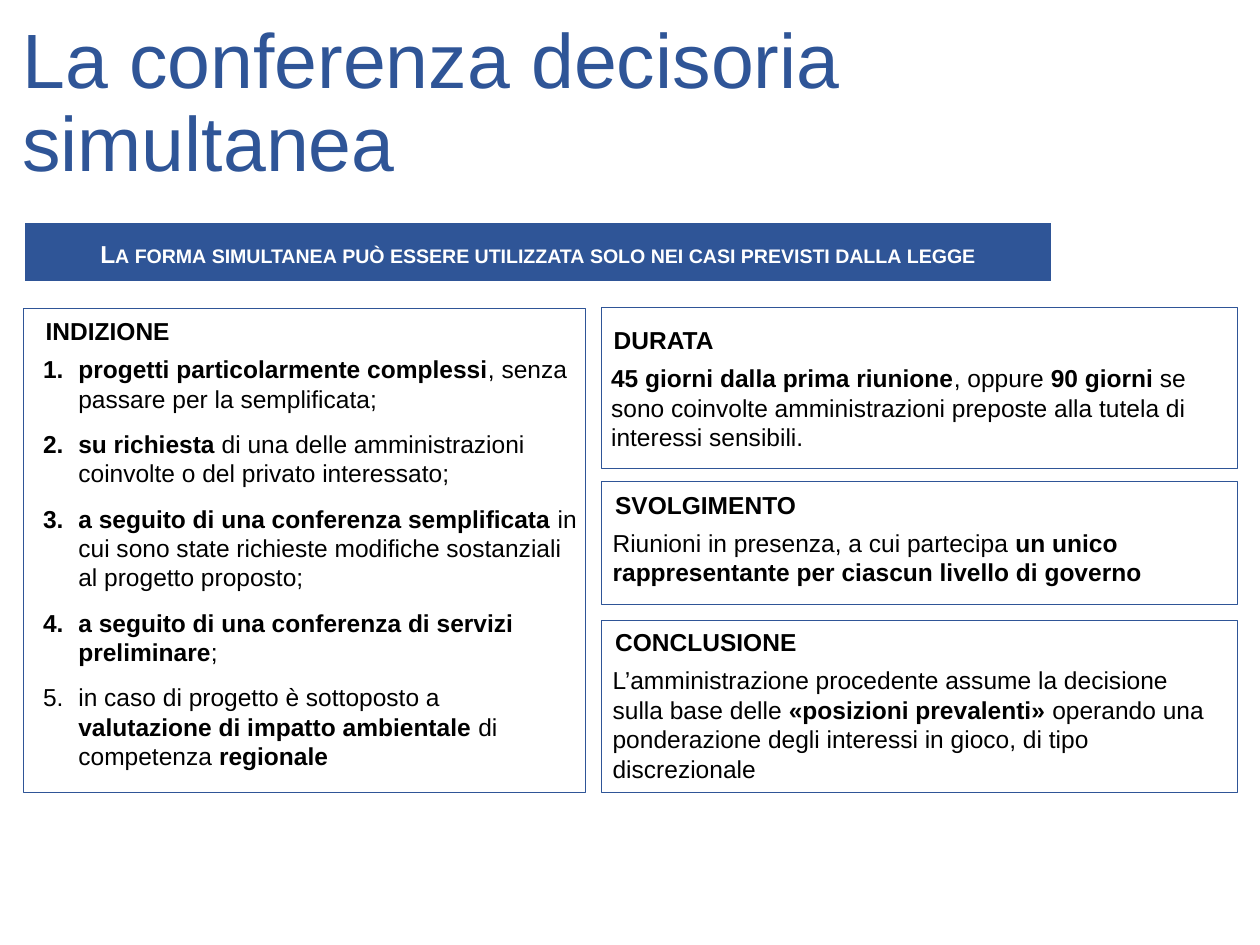
import lxml.etree
import pptx
import pptx.dml.color
import pptx.enum.shapes
import pptx.enum.text
import pptx.oxml.ns
import pptx.util

Cm, Pt = pptx.util.Cm, pptx.util.Pt
qn = pptx.oxml.ns.qn
BLUE, WHITE, BLACK = "2F5597", "FFFFFF", "000000"
RECTANGLE = pptx.enum.shapes.MSO_SHAPE.RECTANGLE
MIDDLE = pptx.enum.text.MSO_ANCHOR.MIDDLE


def color(hex_string):
    return pptx.dml.color.RGBColor.from_string(hex_string)


def add_run(paragraph, wording, size, hex_string, bold=False):
    run = paragraph.add_run()
    run.text = wording
    run.font.name = "Arial"
    run.font.size = Pt(size)
    run.font.bold = bold
    run.font.color.rgb = color(hex_string)
    return run


deck = pptx.Presentation()
deck.slide_width, deck.slide_height = Cm(25.4), Cm(19.05)
slide = deck.slides.add_slide(deck.slide_layouts[6])
slide.background.fill.solid()
slide.background.fill.fore_color.rgb = color(WHITE)

# Title
title = slide.shapes.add_textbox(Cm(0.2), Cm(0.28), Cm(21.9), Cm(3.68)).text_frame
title.word_wrap = True
title.vertical_anchor = MIDDLE
title.paragraphs[0].line_spacing = 0.9
add_run(title.paragraphs[0], "La conferenza decisoria simultanea", 44, BLUE)

# Banner
banner = slide.shapes.add_shape(RECTANGLE, Cm(0.48), Cm(4.47), Cm(20.72), Cm(1.22))
banner.shadow.inherit = False
banner.fill.solid()
banner.fill.fore_color.rgb = color(BLUE)
banner.line.color.rgb = color(WHITE)
banner.line.width = Pt(1)
frame = banner.text_frame
frame.word_wrap = True
frame.vertical_anchor = MIDDLE
frame.margin_left = frame.margin_right = frame.margin_top = Cm(0.15)
frame.margin_bottom = 0
rule = frame.paragraphs[0]
rule.alignment = pptx.enum.text.PP_ALIGN.CENTER
rule.line_spacing = 0.9
rule.space_after = Pt(4.5)
wording = "La forma simultanea può essere utilizzata solo nei casi previsti dalla legge"
rule_run = add_run(rule, wording, 14, WHITE, True)
rule_run.font._element.set("cap", "small")

# Sections: heading, panel box, text box, numbered, paragraphs of (wording, bold) runs
sections = [
    ("INDIZIONE", (0.48, 6.22, 11.33, 9.75), (-1.32, 6.2, 13.13, 4.72), True, [
        [("progetti particolarmente complessi", True),
         (", senza passare per la semplificata;", False)],
        [("su richiesta ", True),
         ("di una delle amministrazioni coinvolte o del privato interessato;", False)],
        [("a seguito di una conferenza semplificata ", True),
         ("in cui sono state richieste modifiche sostanziali al progetto proposto;", False)],
        [("a seguito di una conferenza di servizi preliminare", True), (";", False)],
        [("in caso di progetto è sottoposto a ", False),
         ("valutazione di impatto ambientale", True),
         (" di competenza ", False), ("regionale", True)],
    ]),
    ("DURATA", (12.12, 6.2, 12.83, 3.25), (10.13, 6.38, 14.76, 3.1), False, [
        [("45 giorni dalla prima riunione", True), (", oppure ", False),
         ("90 giorni ", True),
         ("se sono coinvolte amministrazioni preposte alla tutela di interessi sensibili.",
          False)],
    ]),
    ("SVOLGIMENTO", (12.12, 9.7, 12.83, 2.49), (10.16, 9.7, 14.76, 4.72), False, [
        [("Riunioni in presenza, a cui partecipa ", False),
         ("un unico rappresentante per ciascun livello di governo", True)],
    ]),
    ("CONCLUSIONE", (12.12, 12.5, 12.83, 3.48), (10.16, 12.47, 14.73, 4.72), False, [
        [("L’amministrazione procedente assume la decisione sulla base delle ", False),
         ("«posizioni prevalenti» ", True),
         ("operando una ponderazione degli interessi in gioco, di tipo discrezionale",
          False)],
    ]),
]

for heading, panel_box, text_box, numbered, paragraphs in sections:
    panel = slide.shapes.add_shape(RECTANGLE, *map(Cm, panel_box))
    panel.shadow.inherit = False
    panel.fill.solid()
    panel.fill.fore_color.rgb = color(WHITE)
    panel_color = panel._element.spPr.find(qn("a:solidFill"))[0]
    lxml.etree.SubElement(panel_color, qn("a:alpha"), val="40000")
    panel.line.color.rgb = color(BLUE)
    panel.line.width = Pt(0.5)

    frame = slide.shapes.add_textbox(*map(Cm, text_box)).text_frame
    frame.word_wrap = True
    frame.margin_left = Cm(2.01)
    frame.margin_top = frame.margin_right = frame.margin_bottom = Cm(0.18)

    head = frame.paragraphs[0]
    head._p.get_or_add_pPr().set("marL", str(Cm(0.23)))
    head.space_after = Pt(4.9)
    add_run(head, heading, 14, BLACK, True)

    for runs in paragraphs:
        paragraph = frame.add_paragraph()
        properties = paragraph._p.get_or_add_pPr()
        if numbered:
            properties.set("marL", str(Cm(0.89)))
            properties.set("indent", str(Cm(-0.71)))
            lxml.etree.SubElement(properties, qn("a:buFont"), typeface="+mj-lt")
            lxml.etree.SubElement(properties, qn("a:buAutoNum"), type="arabicPeriod")
        else:
            properties.set("marL", str(Cm(0.18)))
        paragraph.space_after = Pt(9 if numbered else 2.1)
        for wording, bold in runs:
            add_run(paragraph, wording, 14, BLACK, bold)

deck.save("out.pptx")
